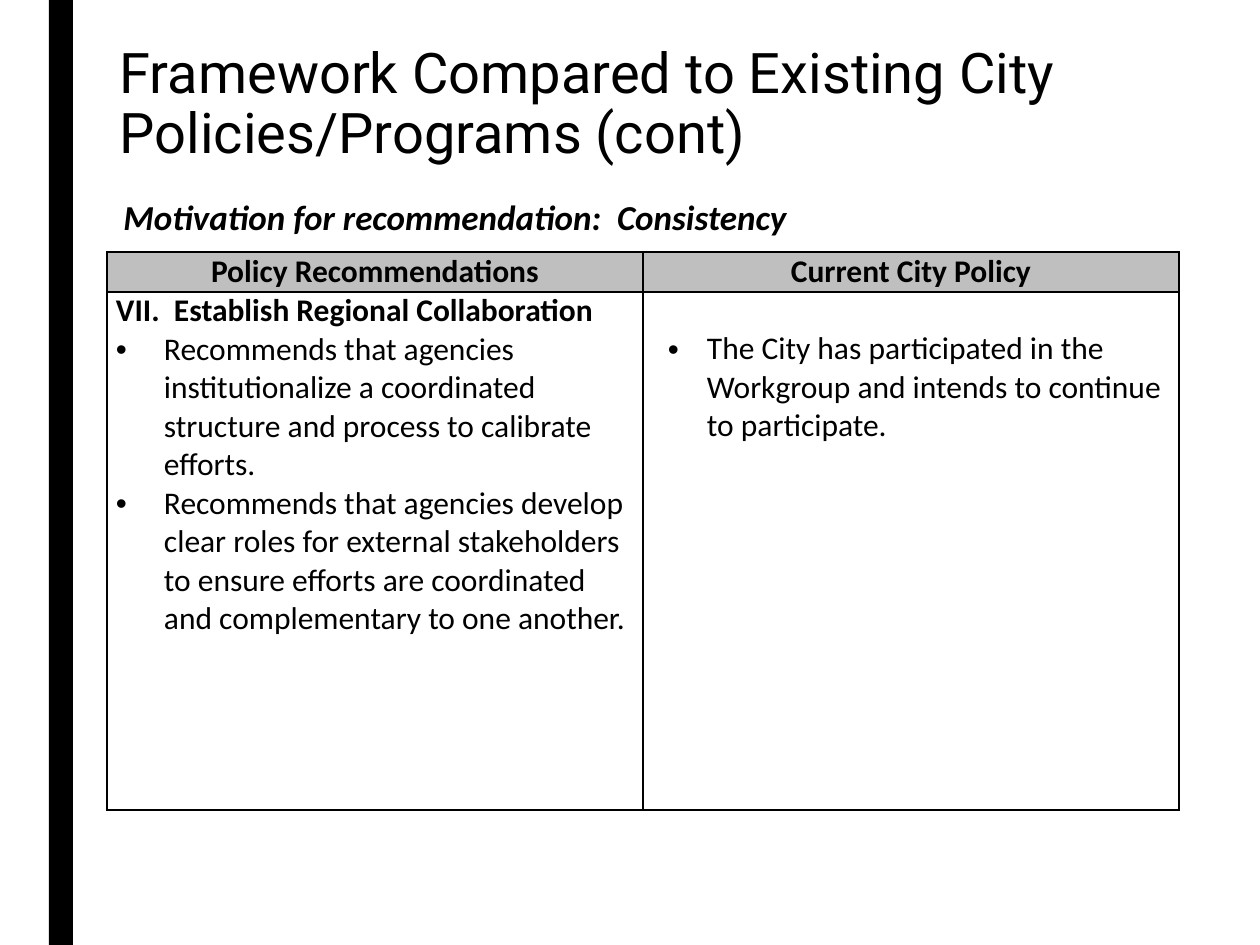
from dataclasses import dataclass
from lxml.etree import SubElement
from pptx import Presentation
from pptx.dml.color import RGBColor
from pptx.enum.shapes import MSO_SHAPE as Shape
from pptx.enum.text import MSO_ANCHOR as Anchor, PP_ALIGN as Align
from pptx.oxml.ns import qn
from pptx.util import Emu, Pt

TITLE = "Framework Compared to Existing City Policies/Programs (cont)"
MOTIVATION = "Motivation for recommendation:  Consistency"
HEADERS = ["Policy Recommendations", "Current City Policy"]
CELLS = [
    {
        "heading": "VII.  Establish Regional Collaboration",
        "bullets": [
            "Recommends that agencies institutionalize a coordinated structure "
            "and process to calibrate efforts.",
            "Recommends that agencies develop clear roles for external stakeholders "
            "to ensure efforts are coordinated and complementary to one another.",
        ],
        "indent": 48, "hanging": 48, "top": 0,
    },
    {
        "heading": None,
        "bullets": [
            "The City has participated in the Workgroup and intends to continue "
            "to participate.",
        ],
        "indent": 55, "hanging": 39, "top": 38,
    },
]


@dataclass(frozen=True)
class Theme:
    ink: RGBColor = RGBColor(0, 0, 0)
    header: RGBColor = RGBColor(0xBF, 0xBF, 0xBF)
    title_font: str = "Roboto"
    body_font: str = "Calibri"
    title_size: int = 32
    motivation_size: int = 20
    table_size: int = 18
    border: int = 1


THEME = Theme()
SLIDE = (1260, 945)
BAR = (49, 0, 24, 945)
TITLE_BOX = (107, 37, 993, 137)
MOTIVATION_BOX = (111, 189, 973, 55)
TABLE_LEFT, TABLE_TOP = 107, 252
COLUMN_WIDTH = 536
ROW_HEIGHTS = (40, 518)
CELL_MARGIN = 9


def px(length):
    return Emu(round(length * 914400 / 126))


def box(lengths):
    return [px(length) for length in lengths]


def style(paragraph, size, name=THEME.body_font, bold=False, italic=False):
    for run in paragraph.runs:
        font = run.font
        font.name, font.size = name, Pt(size)
        font.bold, font.italic = bold, italic
        font.color.rgb = THEME.ink


def add_bullet(paragraph, indent, hanging):
    properties = paragraph._p.get_or_add_pPr()
    properties.set("marL", str(px(indent)))
    properties.set("indent", str(-px(hanging)))
    SubElement(properties, qn("a:buFont"), typeface="Arial")
    SubElement(properties, qn("a:buChar"), char="•")


def add_borders(cell):
    properties = cell._tc.get_or_add_tcPr()
    for index, side in enumerate(("lnL", "lnR", "lnT", "lnB")):
        line = properties.makeelement(qn(f"a:{side}"), {"w": str(Pt(THEME.border))})
        fill = SubElement(line, qn("a:solidFill"))
        SubElement(fill, qn("a:srgbClr"), val=str(THEME.ink))
        properties.insert(index, line)


def format_cell(cell, top=0):
    cell.margin_left = cell.margin_right = px(CELL_MARGIN)
    cell.margin_top, cell.margin_bottom = px(top), 0
    cell.vertical_anchor = Anchor.TOP
    cell.fill.background()
    add_borders(cell)


def fill_header(cell, text):
    format_cell(cell)
    cell.fill.solid()
    cell.fill.fore_color.rgb = THEME.header
    paragraph = cell.text_frame.paragraphs[0]
    paragraph.text = text
    paragraph.alignment = Align.CENTER
    style(paragraph, THEME.table_size, bold=True)


def fill_body(cell, content):
    format_cell(cell, content["top"])
    heading = content["heading"]
    lines = ([heading] if heading else []) + content["bullets"]
    cell.text_frame.text = "\n".join(lines)
    for paragraph, line in zip(cell.text_frame.paragraphs, lines):
        if line != heading:
            add_bullet(paragraph, content["indent"], content["hanging"])
        style(paragraph, THEME.table_size, bold=line == heading)


def add_bar(slide):
    bar = slide.shapes.add_shape(Shape.RECTANGLE, *box(BAR))
    bar.shadow.inherit = False
    bar.fill.solid()
    bar.fill.fore_color.rgb = THEME.ink
    bar.line.fill.background()


def add_policy_table(slide):
    size = (COLUMN_WIDTH * len(HEADERS), sum(ROW_HEIGHTS))
    frame = slide.shapes.add_table(
        len(ROW_HEIGHTS), len(HEADERS), *box((TABLE_LEFT, TABLE_TOP, *size)))
    table = frame.table
    table.horz_banding = False
    for row, height in zip(table.rows, ROW_HEIGHTS):
        row.height = px(height)
    for index, (header, content) in enumerate(zip(HEADERS, CELLS)):
        table.columns[index].width = px(COLUMN_WIDTH)
        fill_header(table.cell(0, index), header)
        fill_body(table.cell(1, index), content)


def set_title(slide):
    title = slide.shapes.title
    title.left, title.top, title.width, title.height = box(TITLE_BOX)
    title.text_frame.text = TITLE
    title.text_frame.vertical_anchor = Anchor.MIDDLE
    paragraph = title.text_frame.paragraphs[0]
    paragraph.alignment = Align.LEFT
    paragraph.line_spacing = 0.89
    style(paragraph, THEME.title_size, THEME.title_font)


def add_motivation(slide):
    shape = slide.shapes.add_textbox(*box(MOTIVATION_BOX))
    shape.text_frame.word_wrap = True
    shape.text_frame.text = MOTIVATION
    style(shape.text_frame.paragraphs[0], THEME.motivation_size, bold=True, italic=True)


def main():
    presentation = Presentation()
    presentation.slide_width, presentation.slide_height = box(SLIDE)
    slide = presentation.slides.add_slide(presentation.slide_layouts[5])
    add_bar(slide)
    add_policy_table(slide)
    set_title(slide)
    add_motivation(slide)
    presentation.save("out.pptx")


if __name__ == "__main__":
    main()
